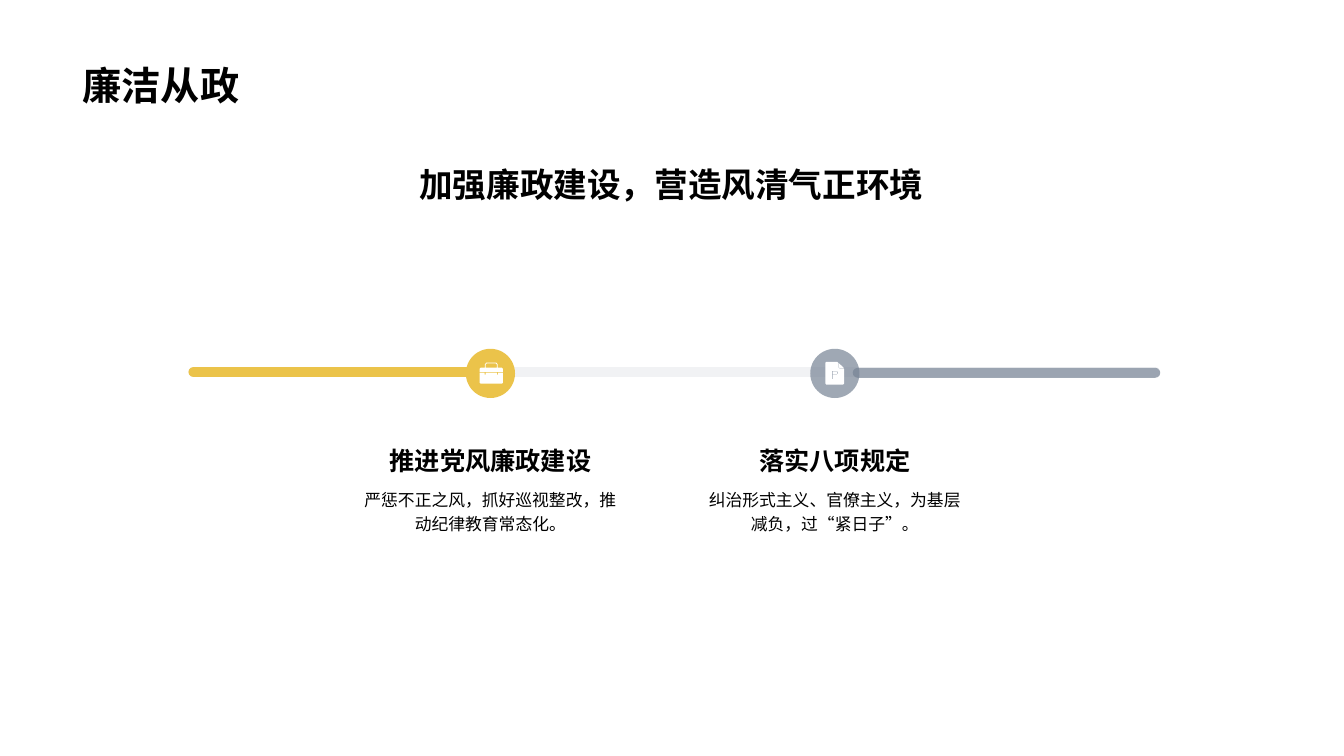
"""Build a slide with a two-stop timeline on clean government."""
from lxml.etree import SubElement
from pptx import Presentation
from pptx.dml.color import RGBColor
from pptx.enum.shapes import MSO_SHAPE as Kind
from pptx.enum.text import MSO_ANCHOR as Anchor, MSO_AUTO_SIZE as Auto, PP_ALIGN as Align
from pptx.oxml.ns import qn
from pptx.util import Cm, Pt

BLACK = RGBColor(0x00, 0x00, 0x00)
WHITE = RGBColor(0xFF, 0xFF, 0xFF)
GOLD = RGBColor(0xEB, 0xC3, 0x4A)
SLATE = RGBColor(0x77, 0x84, 0x95)

LEFT, WIDE = 1.83, 30.18
FIRST, STEP = 12.36, 8.68
DOT, DOT_TOP = 1.24, 8.79
TEXT_W = 7.19
UNIT = Cm(0.00254)

CASE = [
    [(50, 98), (50, 120), (60, 120), (60, 98), (170, 98), (170, 120), (180, 120),
     (180, 98), (230, 98), (230, 200), (220, 208), (10, 208), (0, 200), (0, 98)],
    [(165, 0), (178, 15), (178, 50), (220, 50), (230, 60), (230, 91), (0, 91),
     (0, 60), (10, 50), (52, 50), (52, 15), (65, 0)],
    [(160, 8), (70, 8), (60, 18), (60, 50), (170, 50), (170, 18)],
]
PAPER = [
    [(10, 0), (120, 0), (125, 5), (125, 50), (140, 65), (180, 65), (186, 70),
     (186, 215), (176, 225), (10, 225), (0, 215), (0, 10)],
    [(65, 88), (110, 88), (125, 100), (125, 115), (110, 130), (72, 130),
     (72, 170), (65, 170)],
    [(72, 94), (108, 94), (118, 103), (118, 115), (108, 124), (72, 124)],
    [(130, 8), (182, 58), (140, 58), (130, 48)],
]
BARS = [
    (4.75, 9.25, 24.49, SLATE, 10),
    (4.75, 9.25, 8, GOLD, 100),
    (21.49, 9.27, 7.75, SLATE, 70),
]
STOPS = [
    ("推进党风廉政建设", "严惩不正之风，抓好巡视整改，推动纪律教育常态化。",
     GOLD, 100, CASE, 12.09, 9.14),
    ("落实八项规定", "纠治形式主义、官僚主义，为基层减负，过“紧日子”。",
     SLATE, 70, PAPER, 20.8, 9.12),
]


def paint(shape, color, alpha=100):
    shape.shadow.inherit = False
    shape.line.fill.background()
    shape.fill.solid()
    shape.fill.fore_color.rgb = color
    if alpha < 100:
        tint = shape.fill._xPr.find(qn("a:solidFill"))[0]
        SubElement(tint, qn("a:alpha")).set("val", str(alpha * 1000))


def draw(slide, kind, box, color, alpha):
    shape = slide.shapes.add_shape(kind, *map(Cm, box))
    paint(shape, color, alpha)
    return shape


def icon(slide, rings, left, top):
    pen = slide.shapes.build_freeform(*rings[0][0], scale=UNIT)
    pen.add_line_segments(rings[0][1:])
    for ring in rings[1:]:
        pen.move_to(*ring[0])
        pen.add_line_segments(ring[1:])
    paint(pen.convert_to_shape(Cm(left), Cm(top)), WHITE)


def write(shape, text, size, bold=True, align=Align.CENTER, anchor=Anchor.TOP, space=1.0):
    frame = shape.text_frame
    frame.word_wrap = True
    frame.auto_size = Auto.NONE
    frame.vertical_anchor = anchor
    frame.text = text
    para = frame.paragraphs[0]
    para.alignment = align
    para.line_spacing = space
    font = para.font
    font.name, font.size, font.bold = "Arial", Pt(size), bold
    font.color.rgb = BLACK


def label(slide, box, text, size, **style):
    write(slide.shapes.add_textbox(*map(Cm, box)), text, size, **style)


def head(slide, text):
    title = slide.shapes.title
    title.left, title.top, title.width, title.height = map(Cm, (LEFT, 0.36, WIDE, 2.49))
    write(title, text, 28, align=Align.LEFT, anchor=Anchor.BOTTOM)


def stop(slide, mid, name, note, color, alpha, rings, left, top):
    draw(slide, Kind.OVAL, (mid - DOT / 2, DOT_TOP, DOT, DOT), color, alpha)
    icon(slide, rings, left, top)
    edge = mid - TEXT_W / 2
    label(slide, (edge, 11.1, TEXT_W, 1.02), name, 18, anchor=Anchor.BOTTOM)
    label(slide, (edge, 12.12, TEXT_W, 4.93), note, 12, bold=False, space=1.2)


def main():
    deck = Presentation()
    deck.slide_width, deck.slide_height = Cm(33.87), Cm(19.05)
    slide = deck.slides.add_slide(deck.slide_layouts[5])
    head(slide, "廉洁从政")
    label(slide, (LEFT, 4.01, WIDE, 2.16), "加强廉政建设，营造风清气正环境", 24)
    for left, top, width, color, alpha in BARS:
        bar = draw(slide, Kind.ROUNDED_RECTANGLE, (left, top, width, 0.25), color, alpha)
        bar.adjustments[0] = 0.5
    for index, item in enumerate(STOPS):
        stop(slide, FIRST + index * STEP, *item)
    deck.save("out.pptx")


if __name__ == "__main__":
    main()
